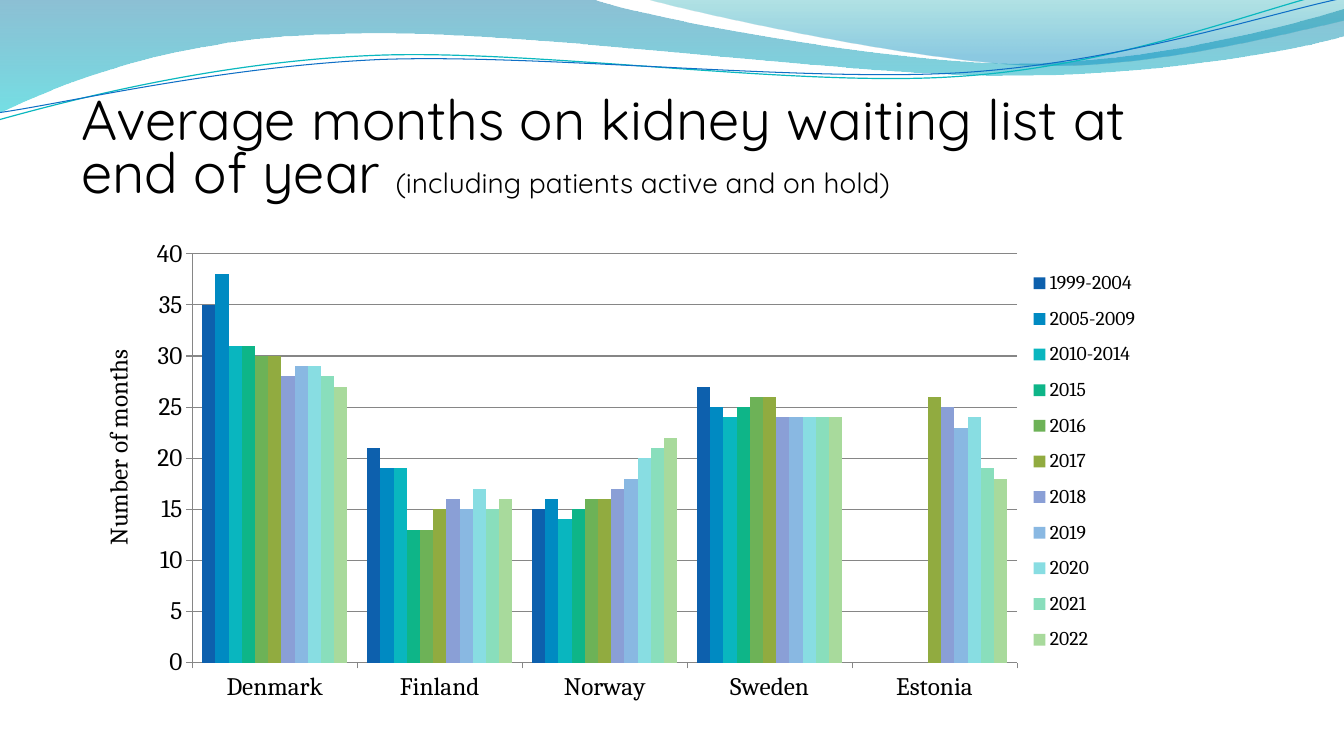
"""Build a slide with a wave banner and a chart of kidney waiting times."""
from lxml.etree import SubElement
from pptx import Presentation
from pptx.chart.data import CategoryChartData
from pptx.dml.color import RGBColor
from pptx.enum.chart import XL_CHART_TYPE, XL_LEGEND_POSITION, XL_TICK_MARK
from pptx.enum.text import MSO_ANCHOR, MSO_AUTO_SIZE, PP_ALIGN
from pptx.oxml import parse_xml
from pptx.oxml.ns import nsdecls, qn
from pptx.util import Cm, Pt

BLACK = RGBColor(0, 0, 0)
GREY = RGBColor(0x86, 0x86, 0x86)
NAVY = RGBColor(0x00, 0x74, 0xA1)
CYAN = RGBColor(0x00, 0xC6, 0xCF)
TEAL = RGBColor(0x00, 0xA1, 0xA9)
SKY = RGBColor(0x00, 0x8B, 0xBF)
AQUA = RGBColor(0x0A, 0xB8, 0xBF)
BLUE = RGBColor(0x0F, 0x6F, 0xC6)
BARS = [RGBColor.from_string(c) for c in (
    "0D60AD", "008AC2", "09B6BF", "0EB588", "6DB257", "91AB40",
    "8A9FD6", "89B8E2", "88DDE2", "89DEBC", "A8DA9C")]


def draw(start, steps, close):
    """Draw an outline; steps of two numbers are lines, of six are curves."""
    spots = [(Cm(x), Cm(y)) for step in steps
             for x, y in zip(step[::2], step[1::2])]
    pen = slide.shapes.build_freeform(Cm(start[0]), Cm(start[1]))
    pen.add_line_segments(spots, close=close)
    shape = pen.convert_to_shape()
    shape.shadow.inherit = False
    lines = iter(shape.element.findall(".//" + qn("a:lnTo")))
    for step in steps:
        group = [next(lines) for _ in step[::2]]
        if len(group) == 3:
            curve = parse_xml(f'<a:cubicBezTo {nsdecls("a")}/>')
            group[0].addprevious(curve)
            for line in group:
                curve.append(line[0])
                line.getparent().remove(line)
    return shape


def place(x, y, size="", inner=""):
    """Make the layout of a chart part as shares of the chart's size."""
    return parse_xml(
        f'<c:layout {nsdecls("c")}><c:manualLayout>{inner}'
        '<c:xMode val="edge"/><c:yMode val="edge"/>'
        f'<c:x val="{x}"/><c:y val="{y}"/>{size}</c:manualLayout></c:layout>')


deck = Presentation()
deck.slide_width, deck.slide_height = Cm(33.87), Cm(19.05)
slide = deck.slides.add_slide(deck.slide_layouts[5])

waves = [
    ((0, 0), [(14.91, -0.03), (16.1, 0.43, 22.45, 1.6, 25.68, 1.6),
              (28.88, 1.6, 32.44, 0.66, 33.86, 0.23), (33.88, 0.91),
              (33.3, 1.12, 29.44, 1.93, 25.25, 1.91),
              (21.06, 1.91, 12.93, 0.71, 8.71, 0.86),
              (4.37, 0.91, 1.55, 2.11, -0.05, 2.87)],
     [(0, NAVY, 45), (1, CYAN, 55)]),
    ((16.21, -0.03), [(17.25, 0.28, 23.09, 1.57, 26.04, 1.65),
                      (28.96, 1.75, 32.56, 0.81, 33.86, 0.53), (33.86, 0)],
     [(0, TEAL, 30), (0.8, SKY, 45)]),
]
for start, steps, stops in waves:
    wave = draw(start, steps, True)
    wave.line.fill.background()
    wave.fill.gradient()
    wave.fill.gradient_angle = 270
    for stop, (spot, color, alpha) in zip(wave.fill.gradient_stops, stops):
        stop.position = spot
        stop.color.rgb = color
    tints = wave.element.spPr.findall(".//" + qn("a:srgbClr"))
    for tint, (spot, color, alpha) in zip(tints, stops):
        SubElement(tint, qn("a:alpha")).set("val", str(alpha * 1000))

threads = [
    ((-0.03, 3.02), [(1.6, 2.57, 5.33, 1.57, 9.37, 1.4),
                     (13.39, 1.22, 20.04, 2.21, 24.1, 1.93),
                     (28.19, 1.68, 31.78, 0.2, 33.78, -0.25)], AQUA, 0.85),
    ((-0.03, 2.84), [(1.57, 2.62, 5.54, 1.68, 9.58, 1.5),
                     (13.64, 1.35, 20.22, 2.08, 24.26, 1.83),
                     (28.3, 1.57, 31.88, 0.36, 33.86, -0.05)], BLUE, 0.75),
]
for start, steps, color, width in threads:
    thread = draw(start, steps, False)
    thread.fill.background()
    thread.line.color.rgb = color
    thread.line.width = Pt(width)

title = slide.shapes.title
slide.shapes.element.append(title.element)
box = dict(left=Cm(1.8), top=Cm(2.31), width=Cm(27.38), height=Cm(3.18))
for name, value in box.items():
    setattr(title, name, value)
frame = title.text_frame
look = dict(word_wrap=True, auto_size=MSO_AUTO_SIZE.NONE,
            vertical_anchor=MSO_ANCHOR.MIDDLE,
            margin_top=Cm(0), margin_bottom=Cm(0.2))
for name, value in look.items():
    setattr(frame, name, value)
head = frame.paragraphs[0]
head.alignment = PP_ALIGN.LEFT
head.line_spacing = 0.8
for text, size in (("Average months on kidney waiting list at end of year ", 40),
                   ("(including patients active and on hold)", 20)):
    run = head.add_run()
    run.text = text
    for name, value in dict(name="Quicksand", size=Pt(size)).items():
        setattr(run.font, name, value)
    run.font.color.rgb = BLACK

data = CategoryChartData()
data.categories = ["Denmark", "Finland", "Norway", "Sweden", "Estonia"]
months = {
    "1999-2004": (35, 21, 15, 27, None),
    "2005-2009": (38, 19, 16, 25, None),
    "2010-2014": (31, 19, 14, 24, None),
    "2015": (31, 13, 15, 25, None),
    "2016": (30, 13, 16, 26, None),
    "2017": (30, 15, 16, 26, 26),
    "2018": (28, 16, 17, 24, 25),
    "2019": (29, 15, 18, 24, 23),
    "2020": (29, 17, 20, 24, 24),
    "2021": (28, 15, 21, 24, 19),
    "2022": (27, 16, 22, 24, 18),
}
for span, values in months.items():
    data.add_series(span, values)
chart = slide.shapes.add_chart(
    XL_CHART_TYPE.COLUMN_CLUSTERED, Cm(2.17), Cm(5.87), Cm(27.03), Cm(12.29),
    data).chart
chart.has_title = False
chart.has_legend = True

plot = chart.plots[0]
for name, value in dict(gap_width=150, overlap=0, vary_by_categories=False).items():
    setattr(plot, name, value)
for series, color in zip(plot.series, BARS):
    series.format.fill.solid()
    series.format.fill.fore_color.rgb = color

scale = chart.value_axis
limits = dict(minimum_scale=0, maximum_scale=40, major_unit=5,
              has_major_gridlines=True, has_title=True)
for name, value in limits.items():
    setattr(scale, name, value)
scale.tick_labels.number_format = "0"
scale.tick_labels.number_format_is_linked = False
label = scale.axis_title.text_frame
label.text = "Number of months"
turn = label._txBody.find(qn("a:bodyPr"))
turn.set("rot", "-5400000")
turn.set("vert", "horz")

for axis in (chart.category_axis, scale):
    axis.major_tick_mark = XL_TICK_MARK.OUTSIDE
for edge in (chart.category_axis, scale, scale.major_gridlines):
    edge.format.line.color.rgb = GREY
    edge.format.line.width = Pt(0.75)

legend = chart.legend
legend.position = XL_LEGEND_POSITION.RIGHT
legend.include_in_layout = False
fonts = [(chart.font, 18), (label.paragraphs[0].runs[0].font, 18),
         (legend.font, 14)]
for font, size in fonts:
    for name, value in dict(name="Cambria", size=Pt(size), bold=False).items():
        setattr(font, name, value)
    font.color.rgb = BLACK

area = chart.element.find(".//" + qn("c:plotArea"))
name = area.find(".//" + qn("c:title"))
key = chart.element.find(".//" + qn("c:legend"))
for part in (area, name, key):
    for old in part.findall(qn("c:layout")):
        part.remove(old)
area.insert(0, place(0.099, 0.043, '<c:w val="0.769"/><c:h val="0.838"/>',
                     '<c:layoutTarget val="inner"/>'))
name.find(qn("c:tx")).addnext(place(0.01, 0.23))
key.find(qn("c:legendPos")).addnext(
    place(0.871, 0.054, '<c:w val="0.12"/><c:h val="0.83"/>'))

deck.save("out.pptx")
